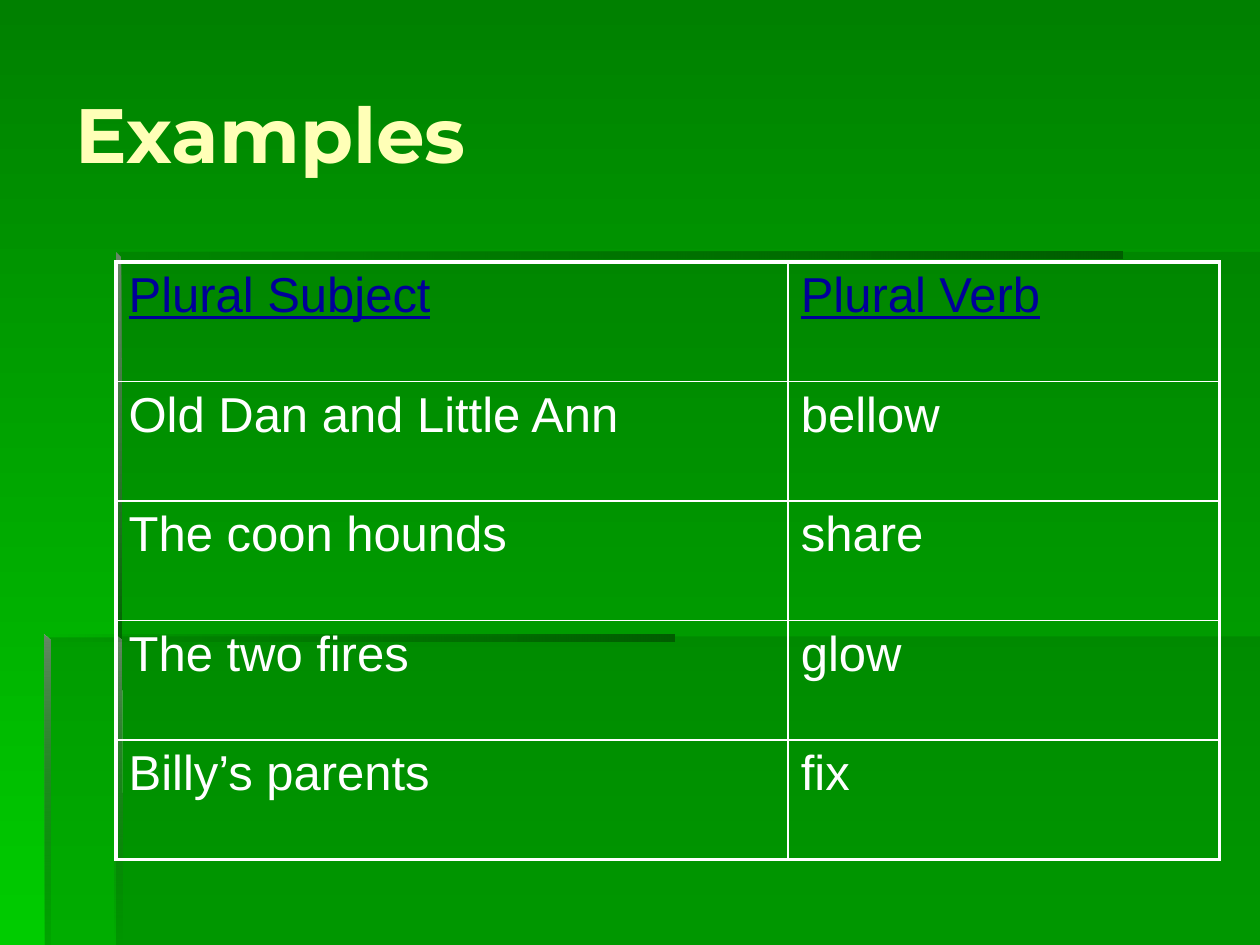
import pptx
import pptx.dml.color
import pptx.enum.text
import pptx.util
from lxml import etree
from pptx.oxml.ns import qn
from pptx.util import Cm

COLORS = {
    "top": "008000", "bottom": "00CC00", "panel": "006600", "shade": "005E00",
    "edge": "668666", "title": "FFFFB7", "heading": "000099", "white": "FFFFFF",
}


def write_text(frame, text, *, font, size, color, bold=False, underline=False):
    paragraph = frame.paragraphs[0]
    paragraph.alignment = pptx.enum.text.PP_ALIGN.LEFT
    run = paragraph.add_run()
    run.text = text
    run.font.name = font
    run.font.size = pptx.util.Pt(size)
    run.font.bold = bold
    run.font.underline = underline
    run.font.color.rgb = pptx.dml.color.RGBColor.from_string(COLORS[color])


def set_gradient(fill, colors, angle):
    """Fill with two colours; the angle is counter-clockwise in degrees."""
    fill.gradient()
    fill.gradient_angle = angle
    for stop, color in zip(fill.gradient_stops, colors):
        stop.color.rgb = pptx.dml.color.RGBColor.from_string(COLORS[color])


presentation = pptx.Presentation()
presentation.slide_width = Cm(25.4)
presentation.slide_height = Cm(19.05)
slide = presentation.slides.add_slide(presentation.slide_layouts[5])
set_gradient(slide.background.fill, ["top", "bottom"], 270)

# Each piece: outline in cm, colours, opacity in percent per colour, angle
RIGHT, DOWN = 0, 270
pieces = [
    ([(2.34, 12.83), (2.34, 19.05), (25.4, 19.05), (25.4, 12.83)],
     ["panel"], [30], None),
    ([(2.39, 12.85), (0.91, 12.85), (0.91, 19.05), (25.4, 19.05), (25.4, 5.08), (2.39, 5.08)],
     ["panel"], [30], None),
    ([(2.34, 5.08), (2.34, 5.21), (22.63, 5.21), (22.63, 5.08)],
     ["panel", "shade"], [0, 100], RIGHT),
    ([(2.34, 5.08), (2.34, 12.95), (2.46, 12.95), (2.44, 5.18)],
     ["edge", "panel"], [100, 100], DOWN),
    ([(2.31, 19.05), (2.46, 19.05), (2.44, 12.9), (2.31, 12.8)],
     ["edge", "panel"], [100, 0], DOWN),
    ([(0.89, 12.8), (0.89, 12.93), (13.59, 12.93), (13.59, 12.8)],
     ["panel", "shade"], [0, 100], RIGHT),
    ([(0.89, 12.8), (0.89, 19.05), (1.02, 19.05), (1.02, 12.93)],
     ["edge", "panel"], [100, 10], DOWN),
]
for outline, colors, opacities, angle in pieces:
    points = [(Cm(x), Cm(y)) for x, y in outline]
    builder = slide.shapes.build_freeform(*points[0])
    builder.add_line_segments(points[1:], close=True)
    shape = builder.convert_to_shape()
    shape.shadow.inherit = False
    shape.line.fill.background()
    if angle is None:
        shape.fill.solid()
        shape.fill.fore_color.rgb = pptx.dml.color.RGBColor.from_string(COLORS[colors[0]])
    else:
        set_gradient(shape.fill, colors, angle)
    for color, opacity in zip(shape._element.spPr.iter(qn("a:srgbClr")), opacities):
        etree.SubElement(color, qn("a:alpha"), val=str(opacity * 1000))

title = slide.shapes.title
title.left, title.top, title.width, title.height = Cm(1.27), Cm(0.69), Cm(23.29), Cm(3.99)
title.text_frame.vertical_anchor = pptx.enum.text.MSO_ANCHOR.MIDDLE
write_text(title.text_frame, "Examples", font="Montserrat", size=44, color="title", bold=True)

rows = [
    ("Plural Subject", "Plural Verb"),
    ("Old Dan and Little Ann", "bellow"),
    ("The coon hounds", "share"),
    ("The two fires", "glow"),
    ("Billy’s parents", "fix"),
]
column_widths = [Cm(13.55), Cm(8.69)]
row_height = Cm(2.41)
table = slide.shapes.add_table(len(rows), len(column_widths), Cm(2.34), Cm(5.28),
                               sum(column_widths), row_height * len(rows)).table
table.first_row = False
table.horz_banding = False
for column, width in zip(table.columns, column_widths):
    column.width = width

for row_index, texts in enumerate(rows):
    table.rows[row_index].height = row_height
    for column_index, text in enumerate(texts):
        cell = table.cell(row_index, column_index)
        heading = row_index == 0
        write_text(cell.text_frame, text, font="Arial", size=28,
                   color="heading" if heading else "white", underline=heading)
        outer_sides = {
            "a:lnL": column_index == 0,
            "a:lnR": column_index == len(texts) - 1,
            "a:lnT": heading,
            "a:lnB": row_index == len(rows) - 1,
        }
        properties = cell._tc.get_or_add_tcPr()
        for side, is_outer in outer_sides.items():
            width = pptx.util.Pt(2.25 if is_outer else 1)
            line = etree.SubElement(properties, qn(side), w=str(int(width)))
            line_fill = etree.SubElement(line, qn("a:solidFill"))
            etree.SubElement(line_fill, qn("a:srgbClr"), val=COLORS["white"])
        cell.fill.background()

presentation.save("out.pptx")
